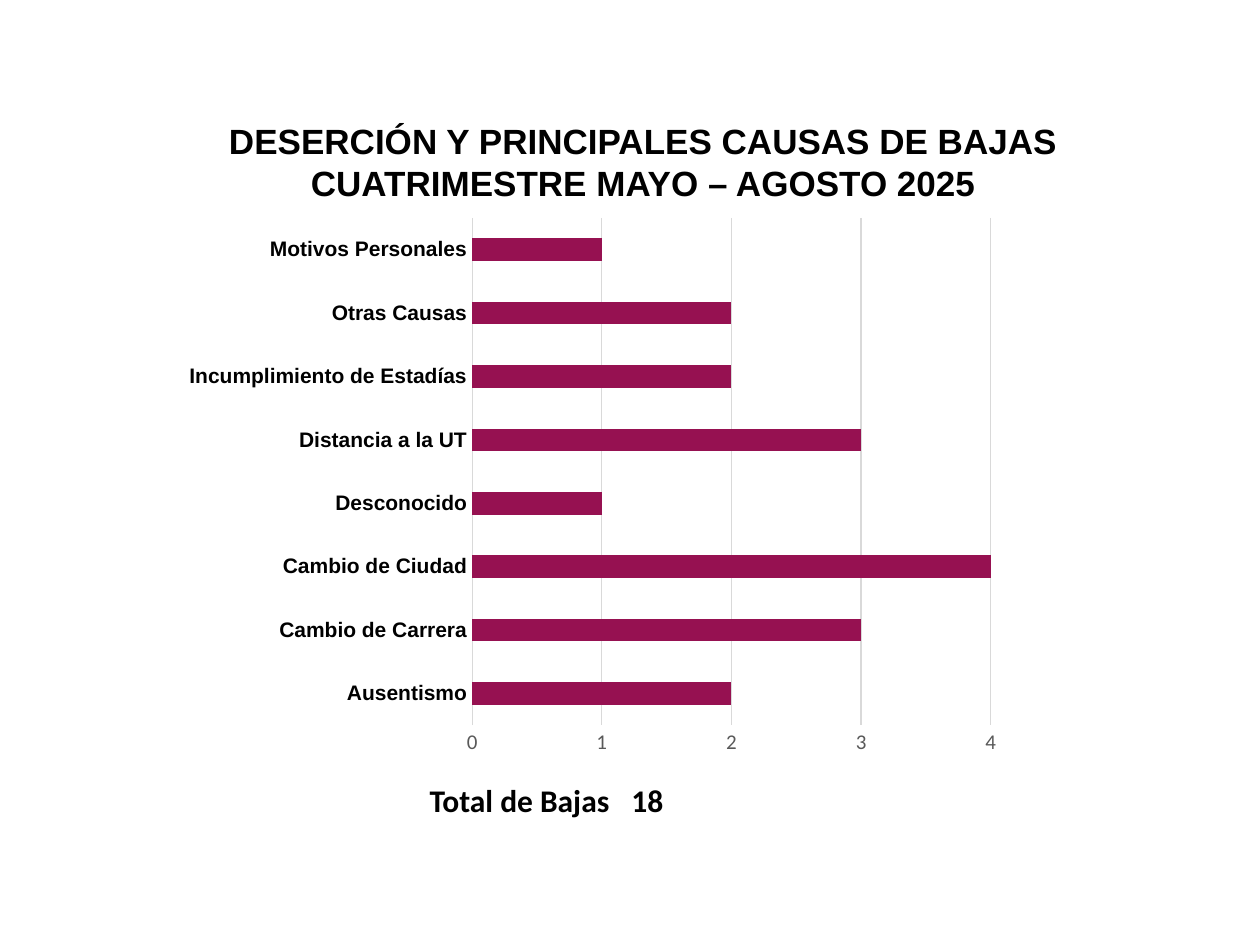
from dataclasses import dataclass

from lxml import etree
from pptx import Presentation
from pptx import util as u
from pptx.chart.data import CategoryChartData
from pptx.dml.color import RGBColor
from pptx.enum import chart as ch, text
from pptx.oxml.ns import qn

COLORS = {"ink": "000000", "axis": "595959", "grid": "D9D9D9", "bar": "961151"}
CAUSES = {
    "Ausentismo": 2,
    "Cambio de Carrera": 3,
    "Cambio de Ciudad": 4,
    "Desconocido": 1,
    "Distancia a la UT": 3,
    "Incumplimiento de Estadías": 2,
    "Otras Causas": 2,
    "Motivos Personales": 1,
}


@dataclass
class Label:
    lines: list[str]
    left: float
    top: float
    width: float
    height: float
    font: str
    size: int
    align: text.PP_ALIGN
    tab: float = 0


LABELS = [
    Label(["DESERCIÓN Y PRINCIPALES CAUSAS DE BAJAS", "CUATRIMESTRE MAYO – AGOSTO 2025"],
          4.09, 2.29, 17.75, 1.96, "Arial", 20, text.PP_ALIGN.CENTER),
    Label(["Total de Bajas\t18"], 8.41, 15.62, 5.41, 1.02, "Calibri", 18,
          text.PP_ALIGN.LEFT, tab=4.07),
]


def rgb(name: str) -> RGBColor:
    return RGBColor.from_string(COLORS[name])


def set_font(font, name: str, size: int, color: str, bold: bool = False) -> None:
    font.name, font.size, font.bold = name, u.Pt(size), bold
    font.color.rgb = rgb(color)


def set_line(line) -> None:
    line.color.rgb = rgb("grid")
    line.width = u.Pt(0.75)


def add_label(s, label: Label) -> None:
    box = s.shapes.add_textbox(u.Cm(label.left), u.Cm(label.top),
                               u.Cm(label.width), u.Cm(label.height))
    tf = box.text_frame
    tf.word_wrap = True
    for i, line in enumerate(label.lines):
        p = tf.add_paragraph() if i else tf.paragraphs[0]
        p.alignment = label.align
        if label.tab:
            tabs = etree.SubElement(p._p.get_or_add_pPr(), qn("a:tabLst"))
            etree.SubElement(tabs, qn("a:tab"), pos=str(u.Cm(label.tab)), algn="l")
        r = p.add_run()
        r.text = line
        set_font(r.font, label.font, label.size, "ink", bold=True)


def add_causes_chart(s) -> None:
    data = CategoryChartData()
    data.categories = list(CAUSES)
    data.add_series("Bajas", list(CAUSES.values()))
    chart = s.shapes.add_chart(ch.XL_CHART_TYPE.BAR_CLUSTERED, u.Cm(3.48), u.Cm(4.17),
                               u.Cm(16.94), u.Cm(11.28), data).chart
    chart.has_legend = chart.has_title = False
    set_font(chart.font, "Calibri", 10, "ink")

    plot = chart.plots[0]
    plot.gap_width = 182
    plot.vary_by_categories = False
    fill = plot.series[0].format.fill
    fill.solid()
    fill.fore_color.rgb = rgb("bar")

    cat, val = chart.category_axis, chart.value_axis
    for axis in (cat, val):
        axis.major_tick_mark = axis.minor_tick_mark = ch.XL_TICK_MARK.NONE
    set_font(cat.tick_labels.font, "Arial", 12, "ink", bold=True)
    set_line(cat.format.line)
    set_font(val.tick_labels.font, "Calibri", 12, "axis")
    val.format.line.fill.background()
    val.minimum_scale, val.maximum_scale, val.major_unit = 0, 4, 1
    val.has_major_gridlines = True
    set_line(val.major_gridlines.format.line)


def main() -> None:
    prs = Presentation()
    prs.slide_width, prs.slide_height = u.Cm(25.4), u.Cm(19.05)
    s = prs.slides.add_slide(prs.slide_layouts[6])
    for label in LABELS:
        add_label(s, label)
    add_causes_chart(s)
    prs.save("out.pptx")


if __name__ == "__main__":
    main()
